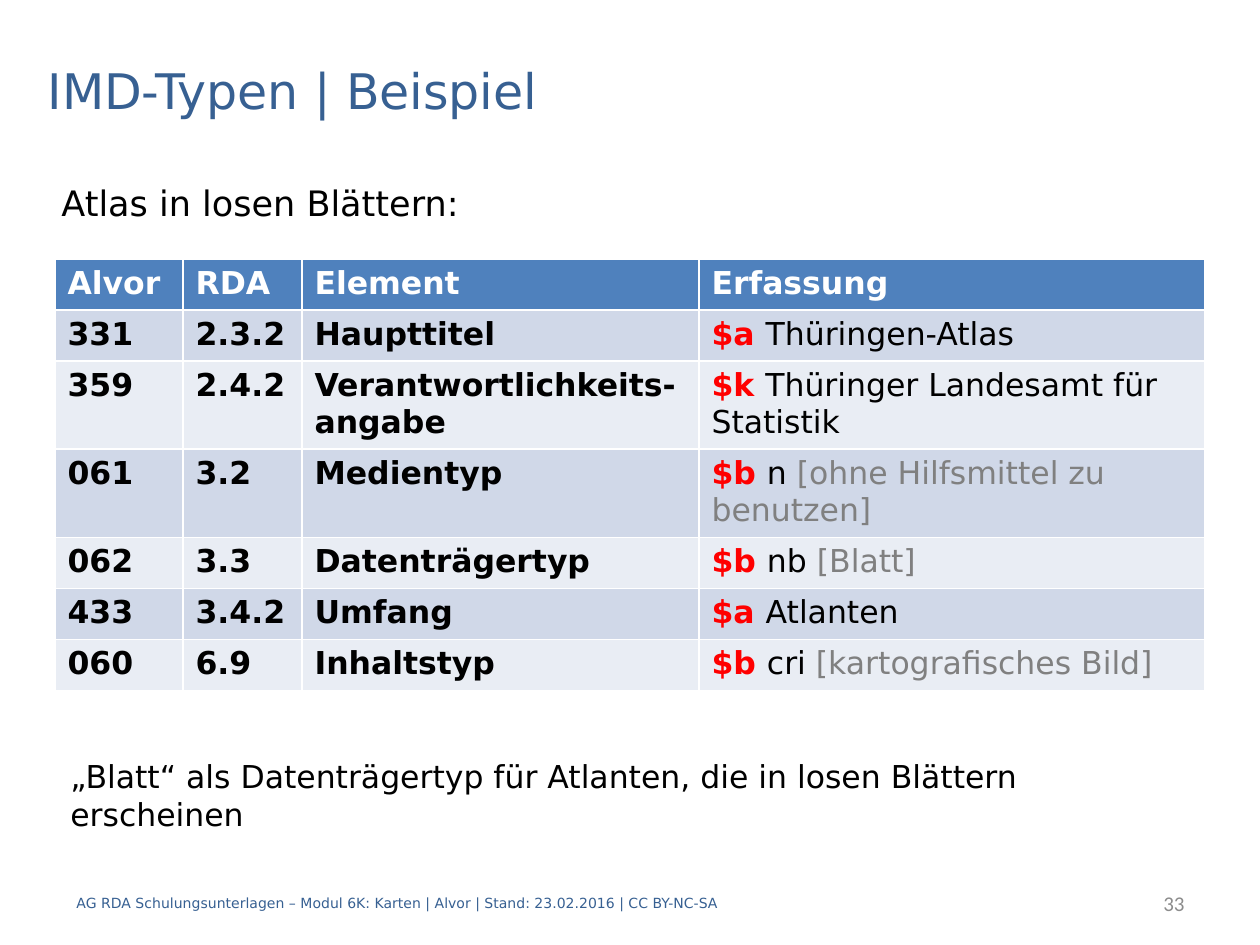
import pptx
import pptx.dml.color
import pptx.enum.text
import pptx.util

PX = 914400 / 126
FONT = "DejaVu Sans"
BLUE, BLACK, WHITE, RED, GREY = "376092", "000000", "FFFFFF", "FF0000", "808080"
HEADER_FILL = "4F81BD"
BAND_FILLS = ("D0D8E8", "E9EDF4")
MIDDLE = pptx.enum.text.MSO_ANCHOR.MIDDLE
TOP = pptx.enum.text.MSO_ANCHOR.TOP

COLUMN_WIDTHS = (128, 119, 397, 506)
ROW_HEIGHT = 51
HEADINGS = ("Alvor", "RDA", "Element", "Erfassung")
# Field, rule, element, then subfield, value and explanation
ENTRIES = (
    ("331", "2.3.2", "Haupttitel", "$a ", "Thüringen-Atlas", ""),
    ("359", "2.4.2", "Verantwortlichkeits-angabe",
     "$k ", "Thüringer Landesamt für Statistik", ""),
    ("061", "3.2", "Medientyp", "$b ", "n ", "[ohne Hilfsmittel zu benutzen]"),
    ("062", "3.3", "Datenträgertyp", "$b ", "nb ", "[Blatt]"),
    ("433", "3.4.2", "Umfang", "$a ", "Atlanten", ""),
    ("060", "6.9", "Inhaltstyp", "$b ", "cri ", "[kartografisches Bild]"),
)


def px(length):
    return pptx.util.Emu(round(length * PX))


def rgb(color):
    return pptx.dml.color.RGBColor.from_string(color)


def format_font(font, size, color, bold=False, name=FONT):
    font.name = name
    font.size = pptx.util.Pt(size)
    font.bold = bold
    font.color.rgb = rgb(color)


def add_text(slide, box, lines, size, color, anchor=TOP, wrap=True,
             align=pptx.enum.text.PP_ALIGN.LEFT, name=FONT):
    frame = slide.shapes.add_textbox(*map(px, box)).text_frame
    frame.word_wrap = wrap
    frame.vertical_anchor = anchor
    frame.text = "\n".join(lines)
    for paragraph in frame.paragraphs:
        paragraph.alignment = align
        format_font(paragraph.font, size, color, name=name)


def add_title(slide, box, text):
    title = slide.shapes.title
    title.left, title.top, title.width, title.height = map(px, box)
    frame = title.text_frame
    frame.text = text
    frame.vertical_anchor = MIDDLE
    paragraph = frame.paragraphs[0]
    paragraph.alignment = pptx.enum.text.PP_ALIGN.LEFT
    format_font(paragraph.font, 28, BLUE)


def fill_cell(cell, fill, runs):
    cell.fill.solid()
    cell.fill.fore_color.rgb = rgb(fill)
    paragraph = cell.text_frame.paragraphs[0]
    for text, color, bold in runs:
        if text:
            run = paragraph.add_run()
            run.text = text
            format_font(run.font, 18, color, bold)


def add_entry_table(slide, left, top):
    row_count = len(ENTRIES) + 1
    table = slide.shapes.add_table(
        row_count, len(COLUMN_WIDTHS), px(left), px(top),
        px(sum(COLUMN_WIDTHS)), px(ROW_HEIGHT * row_count)).table
    for column, width in zip(table.columns, COLUMN_WIDTHS):
        column.width = px(width)
    for row in table.rows:
        row.height = px(ROW_HEIGHT)

    # Header row
    for index, heading in enumerate(HEADINGS):
        fill_cell(table.cell(0, index), HEADER_FILL, [(heading, WHITE, True)])

    # Banded body rows
    for row_index, entry in enumerate(ENTRIES, 1):
        fill = BAND_FILLS[(row_index - 1) % 2]
        for index, text in enumerate(entry[:3]):
            fill_cell(table.cell(row_index, index), fill, [(text, BLACK, True)])
        subfield, value, explanation = entry[3:]
        fill_cell(table.cell(row_index, 3), fill,
                  [(subfield, RED, True), (value, BLACK, False),
                   (explanation, GREY, False)])


def add_footer(slide, left, top, width, height):
    add_text(slide, (left, top, 1052, height),
             ["AG RDA Schulungsunterlagen – Modul 6K: Karten | Alvor | "
              "Stand: 23.02.2016 | CC BY-NC-SA"], 8, BLUE, MIDDLE)
    number_width = 200
    add_text(slide, (left + width - number_width, top, number_width, height),
             ["33"], 12, "8C8C8C", MIDDLE,
             align=pptx.enum.text.PP_ALIGN.RIGHT, name="Calibri")


def main():
    presentation = pptx.Presentation()
    presentation.slide_width = px(1260)
    presentation.slide_height = px(945)
    slide = presentation.slides.add_slide(presentation.slide_layouts[5])

    add_footer(slide, 64, 878, 1133, 50)
    add_title(slide, (35, 45, 1191, 90), "IMD-Typen | Beispiel")
    add_entry_table(slide, 55, 259)
    # Remark below and lead-in above the table
    add_text(slide, (58, 751, 1171, 89),
             ["„Blatt“ als Datenträgertyp für Atlanten, die in losen Blättern",
              "erscheinen"], 18, BLACK)
    add_text(slide, (49, 175, 432, 55), ["Atlas in losen Blättern:"], 20, BLACK,
             wrap=False)
    presentation.save("out.pptx")


if __name__ == "__main__":
    main()
